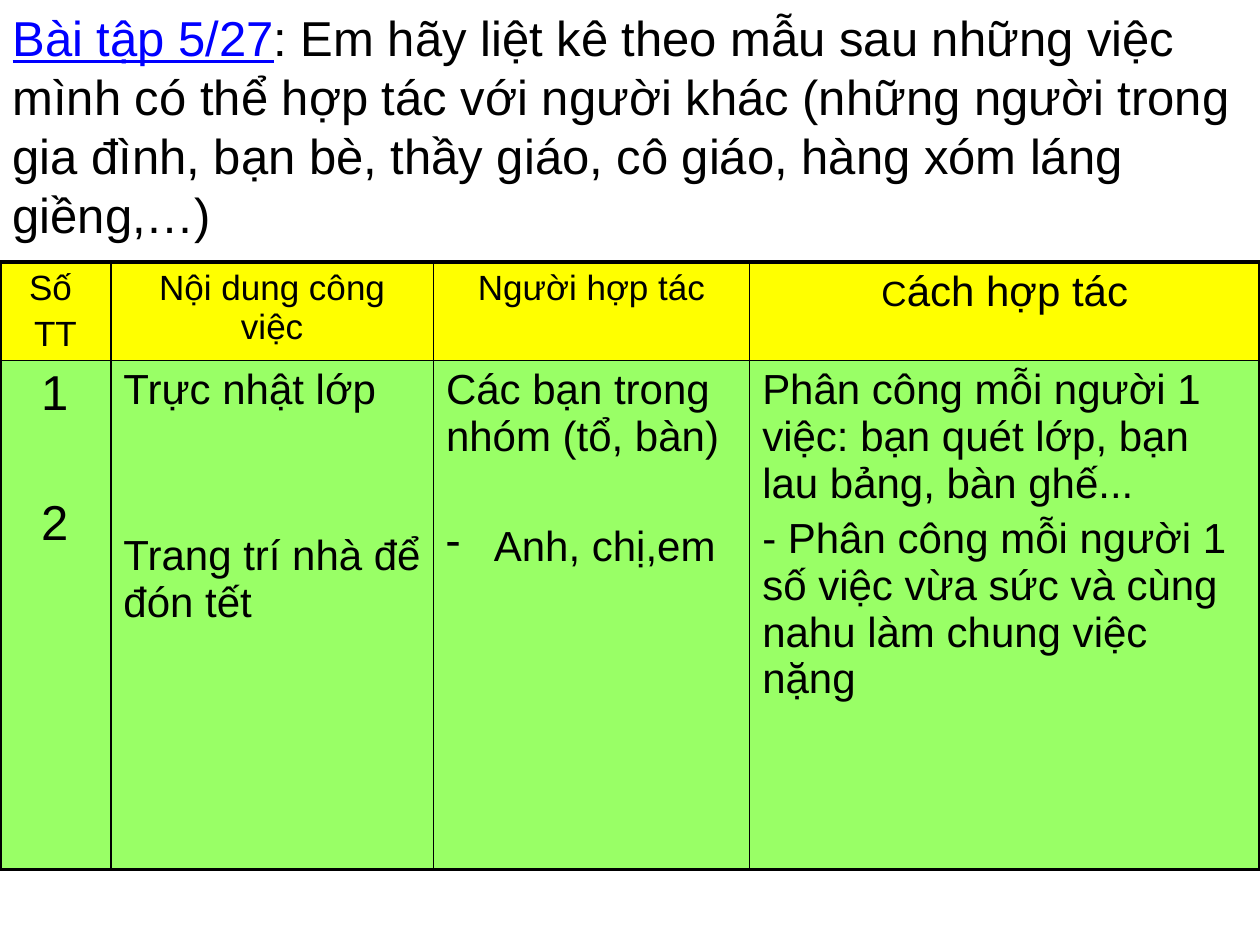
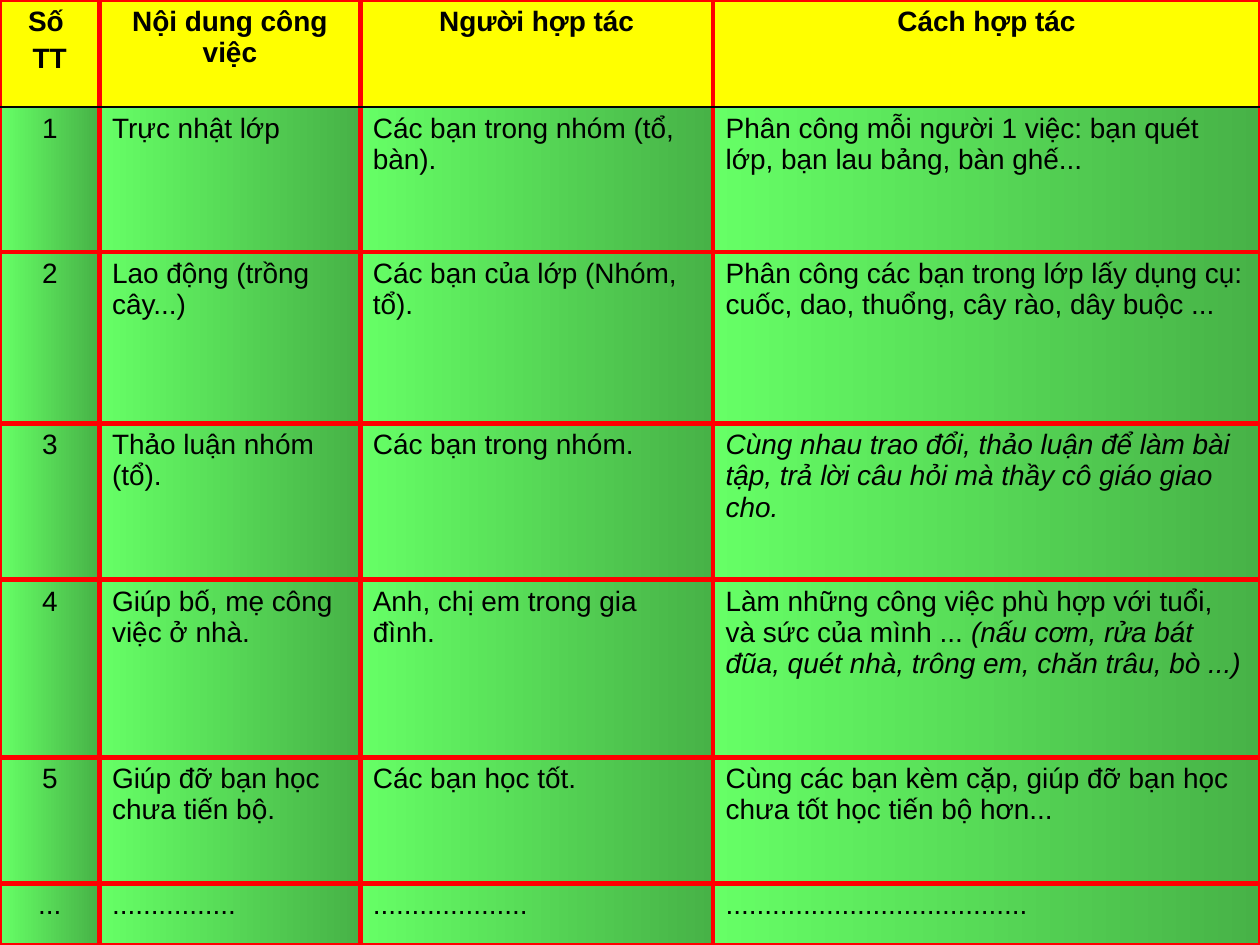
from lxml import etree
from pptx import Presentation
from pptx.dml.color import RGBColor
from pptx.enum.text import MSO_ANCHOR, MSO_AUTO_SIZE, PP_ALIGN
from pptx.oxml.ns import qn
from pptx.util import Inches, Pt

LEFT, CENTER = PP_ALIGN.LEFT, PP_ALIGN.CENTER
TOP, NO_FIT = MSO_ANCHOR.TOP, MSO_AUTO_SIZE.NONE
TITLE_ONLY, BLANK = 5, 6
FONT = "Arial"
BLACK, RED, BLUE, YELLOW = "000000", "FF0000", "0000FF", "FFFF00"
LIME = "99FF66"
GREENS = ("66FF66", "47B247")
HEADINGS = ["Số \nTT", "Nội dung công việc", "Người hợp tác", "Cách hợp tác"]

EXERCISE = [
    ("Bài tập 5/27", {"color": BLUE, "underline": True}),
    (": Em hãy liệt kê theo mẫu sau những việc mình có thể hợp tác với người khác "
     "(những người trong gia đình, bạn bè, thầy giáo, cô giáo, hàng xóm láng giềng,…)", {}),
]
SAMPLE_TASKS = [
    [("1", {"size": 28}), ("2", {"size": 28, "before": 43})],
    [("Trực nhật lớp", {}), ("Trang trí nhà để đón tết", {"before": 68})],
    [("Các bạn trong nhóm (tổ, bàn)", {}), ("Anh, chị,em", {"before": 36, "bullet": "-"})],
    [("Phân công mỗi người 1 việc: bạn quét lớp, bạn lau bảng, bàn ghế...", {}),
     ("- Phân công mỗi người 1 số việc vừa sức và cùng nahu làm chung việc nặng", {})],
]
COOPERATION = [
    ("1", "Trực nhật lớp", "Các bạn trong nhóm (tổ, bàn).",
     "Phân công mỗi người 1 việc: bạn quét lớp, bạn lau bảng, bàn ghế..."),
    ("2", "Lao động (trồng cây...)", "Các bạn của lớp (Nhóm, tổ).",
     "Phân công các bạn trong lớp lấy dụng cụ: cuốc, dao, thuổng, cây rào, dây buộc ..."),
    ("3", "Thảo luận nhóm (tổ).", "Các bạn trong nhóm.",
     "Cùng nhau trao đổi, thảo luận để làm bài tập, trả lời câu hỏi mà thầy cô giáo giao cho."),
    ("4", "Giúp bố, mẹ công việc ở nhà.", "Anh, chị em trong gia đình.",
     "Làm những công việc phù hợp với tuổi, và sức của mình ... "),
    ("5", "Giúp đỡ bạn học chưa tiến bộ.", "Các bạn học tốt.",
     "Cùng các bạn kèm cặp, giúp đỡ bạn học chưa tốt học tiến bộ hơn..."),
    ("...", "." * 16, "." * 20, "." * 39),
]
CHORES = "(nấu cơm, rửa bát đũa, quét nhà, trông em, chăn trâu, bò ...)"


def rgb(value):
    return RGBColor.from_string(value)


class Lesson:
    """Holds the lesson's style and its current slide."""

    def __init__(self):
        self.deck = Presentation()
        self.deck.slide_width, self.deck.slide_height = Inches(10), Inches(7.5)
        self.slide = None

    def new_slide(self, layout):
        self.slide = self.deck.slides.add_slide(self.deck.slide_layouts[layout])

    def style(self, run, size, color=BLACK, bold=False, italic=False, underline=False):
        font = run.font
        font.name, font.size, font.color.rgb = FONT, Pt(size), rgb(color)
        font.bold, font.italic, font.underline = bold, italic, underline

    def title(self, parts, left, top, width, height, size):
        heading = self.slide.shapes.title
        heading.left, heading.top = Inches(left), Inches(top)
        heading.width, heading.height = Inches(width), Inches(height)
        frame = heading.text_frame
        frame.word_wrap, frame.auto_size, frame.vertical_anchor = True, NO_FIT, TOP
        frame.paragraphs[0].alignment = LEFT
        for text, look in parts:
            self.add_run(frame.paragraphs[0], text, size, **look)

    def add_run(self, paragraph, text, size, **look):
        run = paragraph.add_run()
        run.text = text
        self.style(run, size, **look)

    def table(self, top, widths, heights):
        frame = self.slide.shapes.add_table(
            len(heights), len(widths), 0, Inches(top), Inches(sum(widths)), Inches(sum(heights)))
        grid = frame.table
        grid.first_row = grid.horz_banding = False
        for column, width in zip(grid.columns, widths):
            column.width = Inches(width)
        for row, height in zip(grid.rows, heights):
            row.height = Inches(height)
        return grid

    def cell_text(self, cell, lines, size, align=LEFT, bold=False):
        cell.text_frame.text = "\n".join(text for text, _ in lines)
        for index, (paragraph, (_, look)) in enumerate(zip(cell.text_frame.paragraphs, lines)):
            line_size = look.get("size", size)
            paragraph.alignment = align
            if index:
                paragraph.space_before = Pt(look.get("before", line_size * 0.2))
            if "bullet" in look:
                self.bullet(paragraph, look["bullet"])
            for run in paragraph.runs:
                self.style(run, line_size, bold=bold, italic=look.get("italic", False))

    def bullet(self, paragraph, mark):
        properties = paragraph._p.get_or_add_pPr()
        properties.set("marL", str(Inches(0.38)))
        properties.set("indent", str(-Inches(0.38)))
        etree.SubElement(properties, qn("a:buChar"), char=mark)

    def header(self, grid, size, bold=False):
        for cell, heading in zip(grid.rows[0].cells, HEADINGS):
            self.cell_text(cell, [(line, {}) for line in heading.split("\n")], size, CENTER, bold)

    def borders(self, cell, **sides):
        properties = cell._tc.get_or_add_tcPr()
        for side in "LRTB":
            color, weight = sides[side]
            line = etree.SubElement(properties, qn(f"a:ln{side}"), w=str(Pt(weight)))
            fill = etree.SubElement(line, qn("a:solidFill"))
            etree.SubElement(fill, qn("a:srgbClr"), val=color)

    def paint(self, cell, *colors):
        if len(colors) == 1:
            cell.fill.solid()
            cell.fill.fore_color.rgb = rgb(colors[0])
            return
        cell.fill.gradient()
        cell.fill.gradient_angle = 0
        for stop, color in zip(cell.fill.gradient_stops, colors):
            stop.color.rgb = rgb(color)


def exercise_slide(lesson):
    lesson.new_slide(TITLE_ONLY)
    lesson.title(EXERCISE, 0, 0.01, 10, 1.99, 28)
    grid = lesson.table(2.08, [0.88, 2.56, 2.51, 4.05], [0.78, 4.04])
    lesson.header(grid, 20)
    method = grid.cell(0, 3).text_frame.paragraphs[0]
    method.runs[0].text = HEADINGS[3][0]
    lesson.add_run(method, HEADINGS[3][1:], 24)
    for column, lines in enumerate(SAMPLE_TASKS):
        lesson.cell_text(grid.cell(1, column), lines, 24, LEFT if column else CENTER)
    inner, outer = (BLACK, 1), (BLACK, 2.25)
    for row, color in enumerate((YELLOW, LIME)):
        for column in range(4):
            cell = grid.cell(row, column)
            lesson.borders(cell, L=inner if column else outer, R=outer if column == 3 else inner,
                           T=inner if row else outer, B=outer if row else inner)
            lesson.paint(cell, color)


def answer_slide(lesson):
    lesson.new_slide(BLANK)
    grid = lesson.table(0, [0.79, 2.07, 2.8, 4.34], [0.85, 1.15, 1.36, 1.24, 1.41, 1, 0.49])
    lesson.header(grid, 16, bold=True)
    for row, texts in enumerate(COOPERATION, 1):
        for column, text in enumerate(texts):
            look = {"italic": (row, column) == (3, 3)}
            lesson.cell_text(grid.cell(row, column), [(text, look)], 16, LEFT if column else CENTER)
    lesson.add_run(grid.cell(4, 3).text_frame.paragraphs[0], CHORES, 16, italic=True)
    frame, divider = (RED, 3), (BLACK, 1)
    for row in range(len(grid.rows)):
        for cell in grid.rows[row].cells:
            lesson.borders(cell, L=frame, R=frame, T=divider if row == 1 else frame,
                           B=frame if row else divider)
            lesson.paint(cell, *(GREENS if row else (YELLOW,)))


def main():
    lesson = Lesson()
    exercise_slide(lesson)
    answer_slide(lesson)
    lesson.deck.save("out.pptx")


if __name__ == "__main__":
    main()
